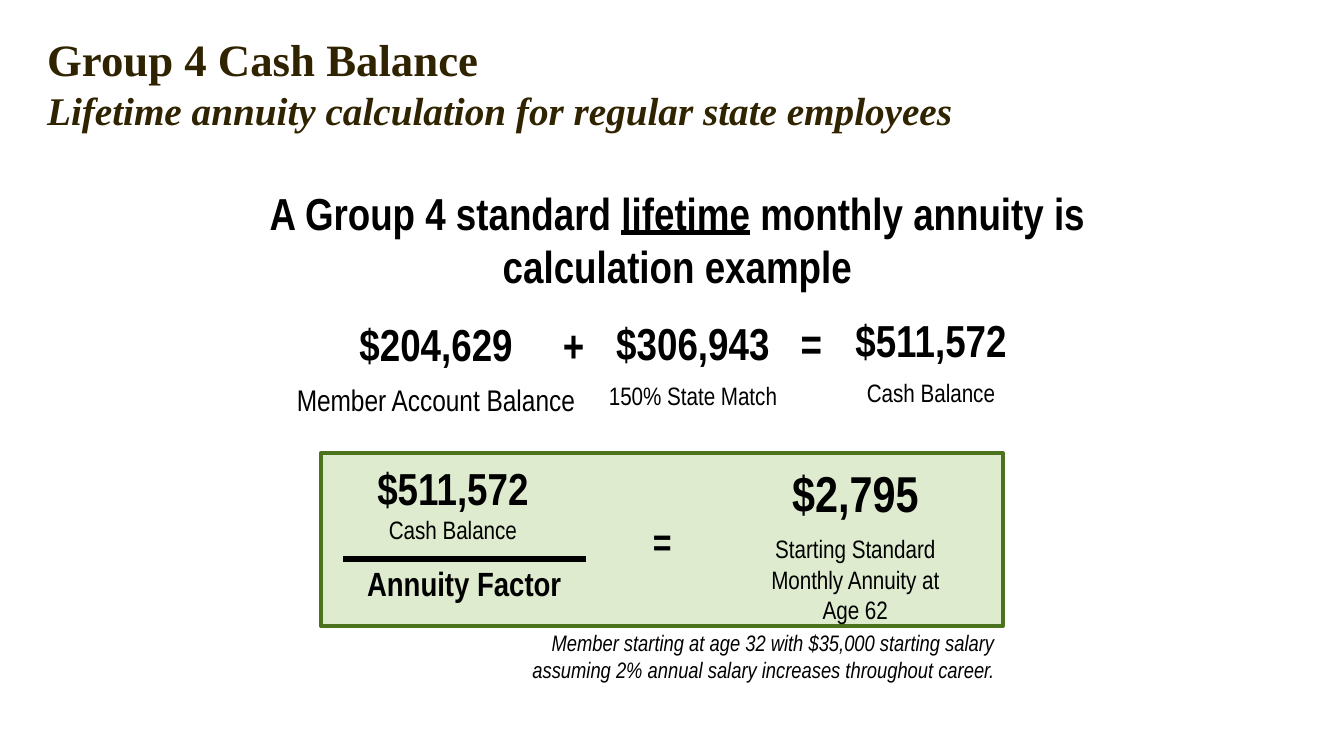
from pptx import Presentation
from pptx.dml.color import RGBColor
from pptx.enum.shapes import MSO_CONNECTOR as Connector, MSO_SHAPE as Shape
from pptx.enum.text import MSO_ANCHOR as Anchor, MSO_AUTO_SIZE as AutoSize, PP_ALIGN as Align
from pptx.oxml.ns import qn
from pptx.util import Cm, Pt
from lxml.etree import SubElement

BLACK = RGBColor(0x00, 0x00, 0x00)
BROWN = RGBColor(0x30, 0x23, 0x00)
PALE_GREEN = RGBColor(0xDE, 0xEB, 0xCF)
GREEN = RGBColor(0x4B, 0x72, 0x1D)
BODY_FONT = "Arial Narrow"
TITLE_FONT = "Times New Roman"


def apply_format(target, values):
    """Set every attribute named in a dict of format values."""
    for name, value in values.items():
        setattr(target, name, value)


def place(box, area):
    """Move and size a box from left, top, width and height in centimetres."""
    apply_format(box, dict(zip(("left", "top", "width", "height"), map(Cm, area))))


def add_span(para, text, size, color=BLACK, **extra):
    """Add one formatted run, with line breaks where the text has them."""
    for index, line in enumerate(text.split("\n")):
        if index:
            para.add_line_break()
        if line:
            span = para.add_run()
            span.text = line
            apply_format(span.font, {"name": BODY_FONT, "size": Pt(size), **extra})
            span.font.color.rgb = color


def set_frame(box, inset=0.0, anchor=Anchor.TOP):
    """Give a box wrapping text with equal side insets."""
    side, edge = Cm(inset), Cm(inset / 2)
    apply_format(box.text_frame, {
        "word_wrap": True, "auto_size": AutoSize.NONE, "vertical_anchor": anchor,
        "margin_left": side, "margin_right": side, "margin_top": edge, "margin_bottom": edge})
    return box.text_frame


def format_para(para, align, before=0.0):
    """Align a paragraph and clear its bullet and indent."""
    props = para._p.get_or_add_pPr()
    props.set("marL", "0")
    props.set("indent", "0")
    SubElement(props, qn("a:buNone"))
    apply_format(para, {"alignment": align, "space_before": Pt(before)})


def add_box(page, area):
    """Add an empty text box."""
    return page.shapes.add_textbox(*map(Cm, area))


def fill_amount(box, area, amount, label, size=24, label_size=13.5, gap=5.8):
    """Write a bold amount with a plain label under it."""
    place(box, area)
    frame = set_frame(box)
    format_para(frame.paragraphs[0], Align.CENTER)
    add_span(frame.paragraphs[0], amount, size, bold=True)
    para = frame.add_paragraph()
    format_para(para, Align.CENTER, gap)
    add_span(para, label, label_size, bold=False)


def add_bold_text(page, area, spans, size, align=Align.LEFT, inset=0.25):
    """Add one bold paragraph made of pairs of text and underline."""
    para = set_frame(add_box(page, area), inset).paragraphs[0]
    format_para(para, align)
    for text, underline in spans:
        add_span(para, text, size, bold=True, underline=underline)


def fill_title(box):
    """Write the two-line slide title."""
    place(box, (0.89, 0.43, 20.65, 2.26))
    para = set_frame(box, anchor=Anchor.MIDDLE).paragraphs[0]
    format_para(para, Align.LEFT)
    add_span(para, "Group 4 Cash Balance\n", 24, BROWN, name=TITLE_FONT, bold=True)
    add_span(para, "Lifetime annuity calculation for regular state employees", 21, BROWN,
             name=TITLE_FONT, bold=True, italic=True)


def fill_assumption(box):
    """Write the right-aligned note on the assumptions."""
    place(box, (9.86, 11.89, 9.09, 1.63))
    frame = set_frame(box)
    frame.margin_right = Cm(0.15)
    format_para(frame.paragraphs[0], Align.RIGHT)
    add_span(frame.paragraphs[0], "Member starting at age 32 with $35,000 starting salary\n"
             "assuming 2% annual salary increases throughout career.", 12, italic=True)


def add_panel(page, area):
    """Add the green panel behind the annuity formula."""
    panel = page.shapes.add_shape(Shape.RECTANGLE, *map(Cm, area))
    panel.shadow.inherit = False
    panel.fill.solid()
    panel.fill.fore_color.rgb = PALE_GREEN
    panel.line.color.rgb = GREEN
    panel.line.width = Pt(2.04)
    return panel


def add_fraction_bar(page, left, right, top):
    """Draw the bar between numerator and denominator."""
    bar = page.shapes.add_connector(Connector.STRAIGHT, Cm(left), Cm(top), Cm(right), Cm(top))
    bar.line.color.rgb = BLACK
    bar.line.width = Pt(3)
    SubElement(bar._element.spPr, qn("a:effectLst"))


def main():
    """Build the slide and save the deck."""
    deck = Presentation()
    deck.slide_width, deck.slide_height = Cm(25.4), Cm(14.29)
    page = deck.slides.add_slide(deck.slide_layouts[3])
    title, member, assumption = page.placeholders

    panel = add_panel(page, (6.07, 8.56, 12.88, 3.28))
    title._element.addprevious(panel._element)
    fill_title(title)
    fill_assumption(assumption)
    add_bold_text(page, (3.76, 3.38, 18.08, 2.31),
                  [("A Group 4 standard ", False), ("lifetime", True),
                   (" monthly annuity is calculation example", False)], 24, Align.CENTER)

    fill_amount(member, (5.38, 5.99, 5.72, 1.93), "$204,629", "Member Account Balance",
                label_size=16)
    for area, amount, label, size, gap in (
            ((10.39, 5.97, 5.41, 1.93), "$306,943", "150% State Match", 24, 5.8),
            ((14.94, 5.92, 5.31, 1.93), "$511,572", "Cash Balance", 24, 5.8),
            ((6.86, 8.71, 3.4, 1.7), "$511,572", "Cash Balance", 24, 0),
            ((14.4, 8.74, 3.53, 3.23), "$2,795",
             "Starting Standard Monthly Annuity at Age 62", 27, 5.8)):
        fill_amount(add_box(page, area), area, amount, label, size, gap=gap)

    for area, sign, size in (((10.39, 5.89, 0.91, 1.27), "+", 24),
                             ((14.88, 5.84, 0.91, 1.27), "=", 24),
                             ((12.09, 9.65, 0.58, 1.14), "=", 21)):
        add_bold_text(page, area, [(sign, False)], size)
    add_fraction_bar(page, 6.48, 11.07, 10.57)
    add_bold_text(page, (6.02, 10.64, 5.51, 1.37), [("Annuity Factor", False)], 18,
                  Align.CENTER, 0)
    deck.save("out.pptx")


if __name__ == "__main__":
    main()
